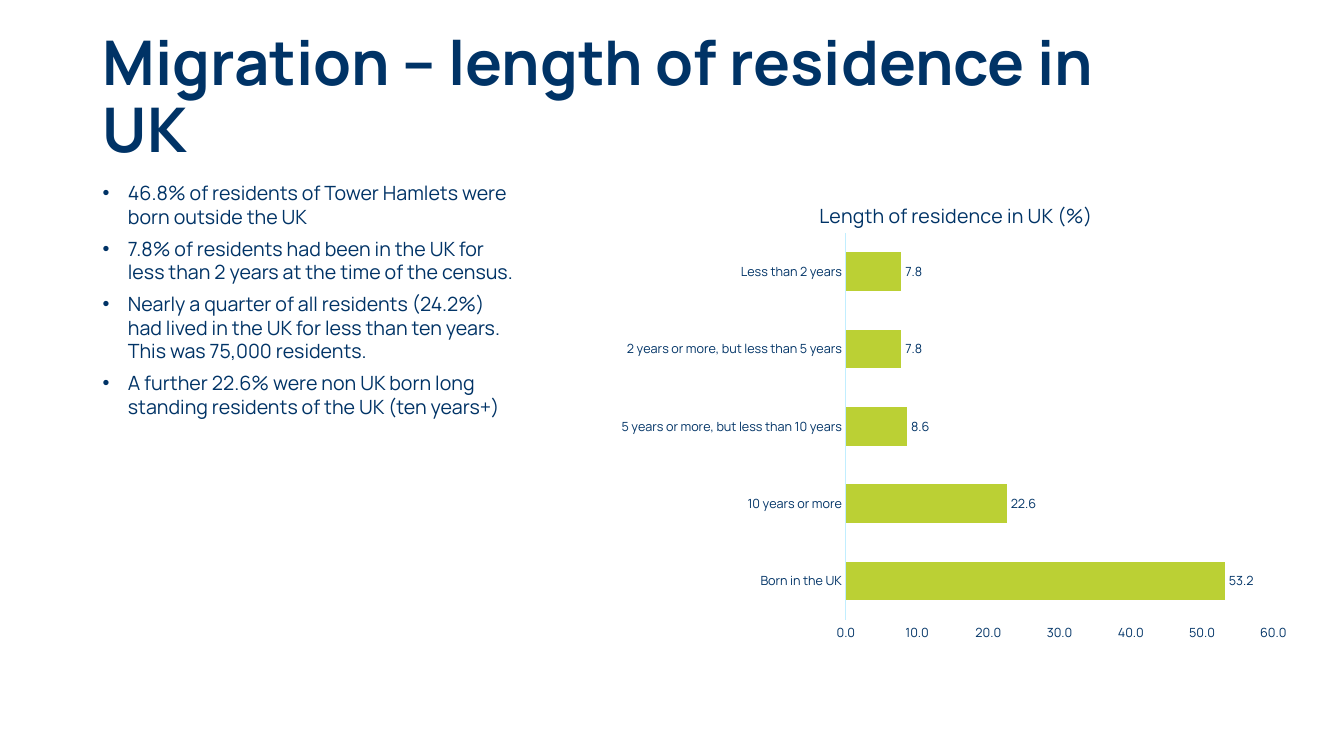
from dataclasses import dataclass
from typing import NamedTuple

from lxml.etree import SubElement
from pptx import Presentation
from pptx.chart.data import CategoryChartData
from pptx.dml.color import RGBColor
from pptx.enum.chart import XL_CHART_TYPE, XL_LABEL_POSITION, XL_TICK_MARK
from pptx.enum.text import MSO_ANCHOR
from pptx.oxml import parse_xml
from pptx.oxml.ns import nsdecls, qn
from pptx.util import Inches, Pt

FONT = "Manrope"
COLORS = {"navy": "003366", "lime": "BBD034", "axis": "C1EEFF", "chart_text": "00445E"}
NUMBER_FORMAT = "#,##0.0"


class Box(NamedTuple):
    left: float
    top: float
    width: float
    height: float


class Residence(NamedTuple):
    category: str
    percent: float


@dataclass
class TextBlock:
    box: Box
    paragraphs: list[str]
    size: int
    bold: bool = False
    bulleted: bool = False
    anchor: MSO_ANCHOR = MSO_ANCHOR.TOP
    line_spacing: float = 1.0


TEXT_BLOCKS = [
    TextBlock(
        Box(0.92, 0.26, 10.69, 1.45),
        ["Migration – length of residence in UK"],
        size=44, bold=True, anchor=MSO_ANCHOR.MIDDLE, line_spacing=0.9,
    ),
    TextBlock(
        Box(0.92, 1.75, 4.28, 4.76),
        [
            "46.8% of residents of Tower Hamlets were born outside the UK",
            "7.8% of residents had been in the UK for less than 2 years at the time of the census.",
            "Nearly a quarter of all residents (24.2%) had lived in the UK for less than ten years. "
            "This was 75,000 residents.",
            "A further 22.6% were non UK born long standing residents of the UK (ten years+)",
        ],
        size=14, bulleted=True,
    ),
]

CHART_BOX = Box(6.03, 1.71, 6.87, 4.76)
PLOT_BOX = Box(8.39, 2.31, 4.24, 3.84)
CHART_TITLE = "Length of residence in UK (%)"
RESIDENCES = [
    Residence("Born in the UK", 53.2),
    Residence("10 years or more", 22.6),
    Residence("5 years or more, but less than 10 years", 8.6),
    Residence("2 years or more, but less than 5 years", 7.8),
    Residence("Less than 2 years", 7.8),
]


def color(name: str) -> RGBColor:
    return RGBColor.from_string(COLORS[name])


def style_font(font, size: int, color_name: str = "navy", bold: bool = False) -> None:
    font.name = FONT
    font.size = Pt(size)
    font.bold = bold
    font.color.rgb = color(color_name)


def add_bullet(paragraph) -> None:
    properties = paragraph._p.get_or_add_pPr()
    properties.set("marL", str(Inches(0.25)))
    properties.set("indent", str(-Inches(0.25)))
    SubElement(properties, qn("a:buFont")).set("typeface", "Arial")
    SubElement(properties, qn("a:buChar")).set("char", "•")


def add_text_block(slide, block: TextBlock) -> None:
    shape = slide.shapes.add_textbox(*map(Inches, block.box))
    text_frame = shape.text_frame
    text_frame.word_wrap = True
    text_frame.vertical_anchor = block.anchor
    text_frame.text = "\n".join(block.paragraphs)
    for index, paragraph in enumerate(text_frame.paragraphs):
        if block.bulleted:
            add_bullet(paragraph)
        paragraph.line_spacing = block.line_spacing
        paragraph.space_before = Pt(6 if index else 0)
        for run in paragraph.runs:
            style_font(run.font, block.size, bold=block.bold)


def set_layout(parent, position: int, settings: dict[str, object]) -> None:
    for previous in parent.findall(qn("c:layout")):
        parent.remove(previous)
    layout = parse_xml(f"<c:layout {nsdecls('c')}><c:manualLayout/></c:layout>")
    for name, value in settings.items():
        SubElement(layout[0], qn(f"c:{name}")).set("val", str(value))
    parent.insert(position, layout)


def style_axis(axis) -> None:
    axis.has_major_gridlines = False
    axis.major_tick_mark = XL_TICK_MARK.NONE
    axis.minor_tick_mark = XL_TICK_MARK.NONE
    style_font(axis.tick_labels.font, 9)


def add_residence_chart(slide) -> None:
    data = CategoryChartData(number_format=NUMBER_FORMAT)
    data.categories = [residence.category for residence in RESIDENCES]
    data.add_series("Series 1", [residence.percent for residence in RESIDENCES])
    chart = slide.shapes.add_chart(
        XL_CHART_TYPE.BAR_CLUSTERED, *map(Inches, CHART_BOX), data
    ).chart
    style_font(chart.font, 10, "chart_text")
    chart.has_legend = False

    chart.has_title = True
    title_frame = chart.chart_title.text_frame
    title_frame.text = CHART_TITLE
    style_font(title_frame.paragraphs[0].runs[0].font, 14)
    set_layout(chart.chart_title._element, 1,
               {"xMode": "edge", "yMode": "edge", "x": 0.3, "y": 0.05})

    style_axis(chart.category_axis)
    chart.category_axis.format.line.color.rgb = color("axis")
    chart.category_axis.format.line.width = Pt(0.75)

    value_axis = chart.value_axis
    style_axis(value_axis)
    value_axis.format.line.fill.background()
    value_axis.minimum_scale = 0
    value_axis.maximum_scale = 60
    value_axis.major_unit = 10
    value_axis.tick_labels.number_format = NUMBER_FORMAT
    value_axis.tick_labels.number_format_is_linked = False

    plot = chart.plots[0]
    plot.gap_width = 100
    plot.vary_by_categories = False
    series = plot.series[0]
    series.format.fill.solid()
    series.format.fill.fore_color.rgb = color("lime")
    labels = series.data_labels
    labels.show_value = True
    labels.position = XL_LABEL_POSITION.OUTSIDE_END
    labels.number_format = NUMBER_FORMAT
    labels.number_format_is_linked = False
    style_font(labels.font, 9)

    set_layout(chart._chartSpace.chart.plotArea, 0, {
        "layoutTarget": "inner", "xMode": "edge", "yMode": "edge",
        "x": (PLOT_BOX.left - CHART_BOX.left) / CHART_BOX.width,
        "y": (PLOT_BOX.top - CHART_BOX.top) / CHART_BOX.height,
        "w": PLOT_BOX.width / CHART_BOX.width,
        "h": PLOT_BOX.height / CHART_BOX.height,
    })


def main() -> None:
    presentation = Presentation()
    presentation.slide_width = Inches(13.33)
    presentation.slide_height = Inches(7.5)
    slide = presentation.slides.add_slide(presentation.slide_layouts[6])
    for block in TEXT_BLOCKS:
        add_text_block(slide, block)
    add_residence_chart(slide)
    presentation.save("out.pptx")


if __name__ == "__main__":
    main()
